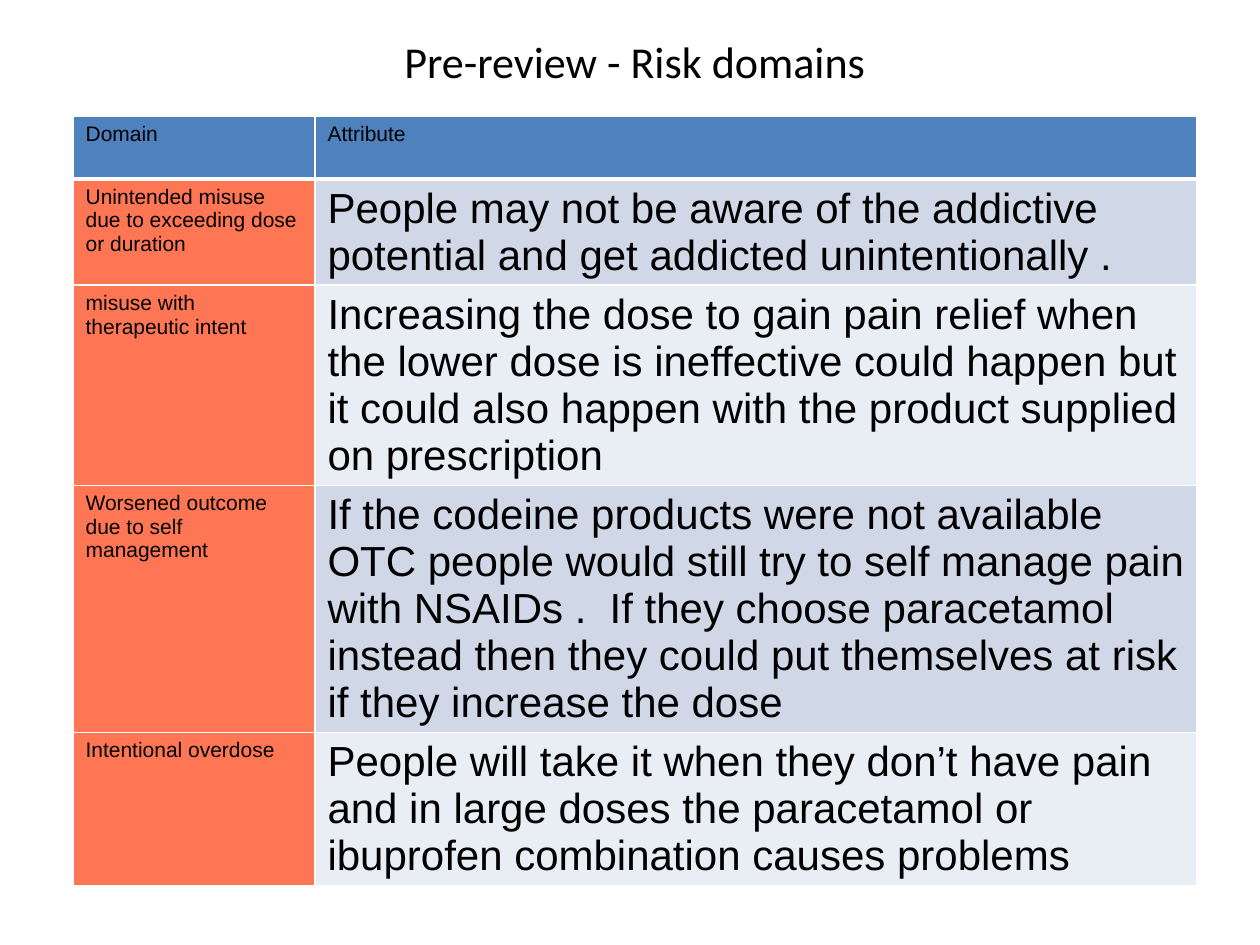
from lxml import etree
from pptx import Presentation
from pptx.dml.color import RGBColor
from pptx.enum.text import MSO_ANCHOR, PP_ALIGN
from pptx.oxml.ns import qn
from pptx.util import Pt

CENTER, MIDDLE, TOP = PP_ALIGN.CENTER, MSO_ANCHOR.MIDDLE, MSO_ANCHOR.TOP
PX = 9144  # 100 px to the inch

COLORS = {"text": "000000", "header": "4F81BD", "domain": "FF3300",
          "band_dark": "D0D8E8", "band_light": "E9EDF4", "border": "FFFFFF"}
DOMAIN_ALPHA = 67

ROWS = [
    ("Domain", "Attribute"),
    ("Unintended misuse due to exceeding dose or duration",
     "People may not be aware of the addictive potential and get addicted "
     "unintentionally ."),
    ("misuse with therapeutic intent",
     "Increasing the dose to gain pain relief when the lower dose is "
     "ineffective could happen but it could also happen with the product "
     "supplied on prescription"),
    ("Worsened outcome due to self management",
     "If the codeine products were not available OTC people would still try "
     "to self manage pain with NSAIDs .  If they choose paracetamol instead "
     "then they could put themselves at risk if they increase the dose"),
    ("Intentional overdose",
     "People will take it when they don’t have pain and in large doses the "
     "paracetamol or ibuprofen combination causes problems"),
]
COL_WIDTHS = [192, 700]
ROW_HEIGHTS = [50, 84, 159, 196, 121]


def px(n):
    return n * PX


class Deck:
    def __init__(self, width, height):
        self.prs = Presentation()
        self.prs.slide_width, self.prs.slide_height = px(width), px(height)
        self.s = self.prs.slides.add_slide(self.prs.slide_layouts[5])

    def style(self, tf, size, font):
        for p in tf.paragraphs:
            for r in p.runs:
                r.font.name, r.font.size, r.font.bold = font, Pt(size), False
                r.font.color.rgb = RGBColor.from_string(COLORS["text"])

    def title(self, text, x, y, w, h):
        sp = self.s.shapes.title
        sp.left, sp.top, sp.width, sp.height = map(px, (x, y, w, h))
        tf = sp.text_frame
        tf.text = text
        tf.vertical_anchor = MIDDLE
        tf.paragraphs[0].alignment = CENTER
        self.style(tf, 25.2, "Calibri")

    def borders(self, cell, bottom=1):
        tc_pr = cell._tc.get_or_add_tcPr()
        # Lines come before the fill in the cell properties
        for i, side in enumerate("LRTB"):
            width = bottom if side == "B" else 1
            ln = etree.Element(qn(f"a:ln{side}"), w=str(Pt(width)))
            fill = etree.SubElement(ln, qn("a:solidFill"))
            etree.SubElement(fill, qn("a:srgbClr"), val=COLORS["border"])
            tc_pr.insert(i, ln)

    def cell(self, cell, text, size, color, alpha=None, bottom=1):
        cell.text = text
        cell.vertical_anchor = TOP
        cell.margin_left = cell.margin_right = px(10)
        cell.margin_top = cell.margin_bottom = px(5)
        self.style(cell.text_frame, size, "Arial")
        cell.fill.solid()
        cell.fill.fore_color.rgb = RGBColor.from_string(COLORS[color])
        if alpha:
            clr = cell._tc.tcPr.find(".//" + qn("a:srgbClr"))
            etree.SubElement(clr, qn("a:alpha"), val=str(alpha * 1000))
        self.borders(cell, bottom)

    def table(self, rows, x, y, widths, heights):
        table = self.s.shapes.add_table(
            len(rows), len(widths), px(x), px(y),
            px(sum(widths)), px(sum(heights))).table
        for column, w in zip(table.columns, widths):
            column.width = px(w)
        for i, ((domain, attribute), h) in enumerate(zip(rows, heights)):
            table.rows[i].height = px(h)
            left, right = table.cell(i, 0), table.cell(i, 1)
            if i == 0:
                self.cell(left, domain, 12, "header", bottom=3)
                self.cell(right, attribute, 12, "header", bottom=3)
            else:
                band = "band_dark" if i % 2 else "band_light"
                self.cell(left, domain, 12, "domain", DOMAIN_ALPHA)
                self.cell(right, attribute, 24, band)


def main():
    deck = Deck(1000, 750)
    # Heading
    deck.title(" Pre-review - Risk domains", 50, 30, 900, 37)
    # Risk domains and their attributes
    deck.table(ROWS, 58, 92, COL_WIDTHS, ROW_HEIGHTS)
    deck.prs.save("out.pptx")


if __name__ == "__main__":
    main()
